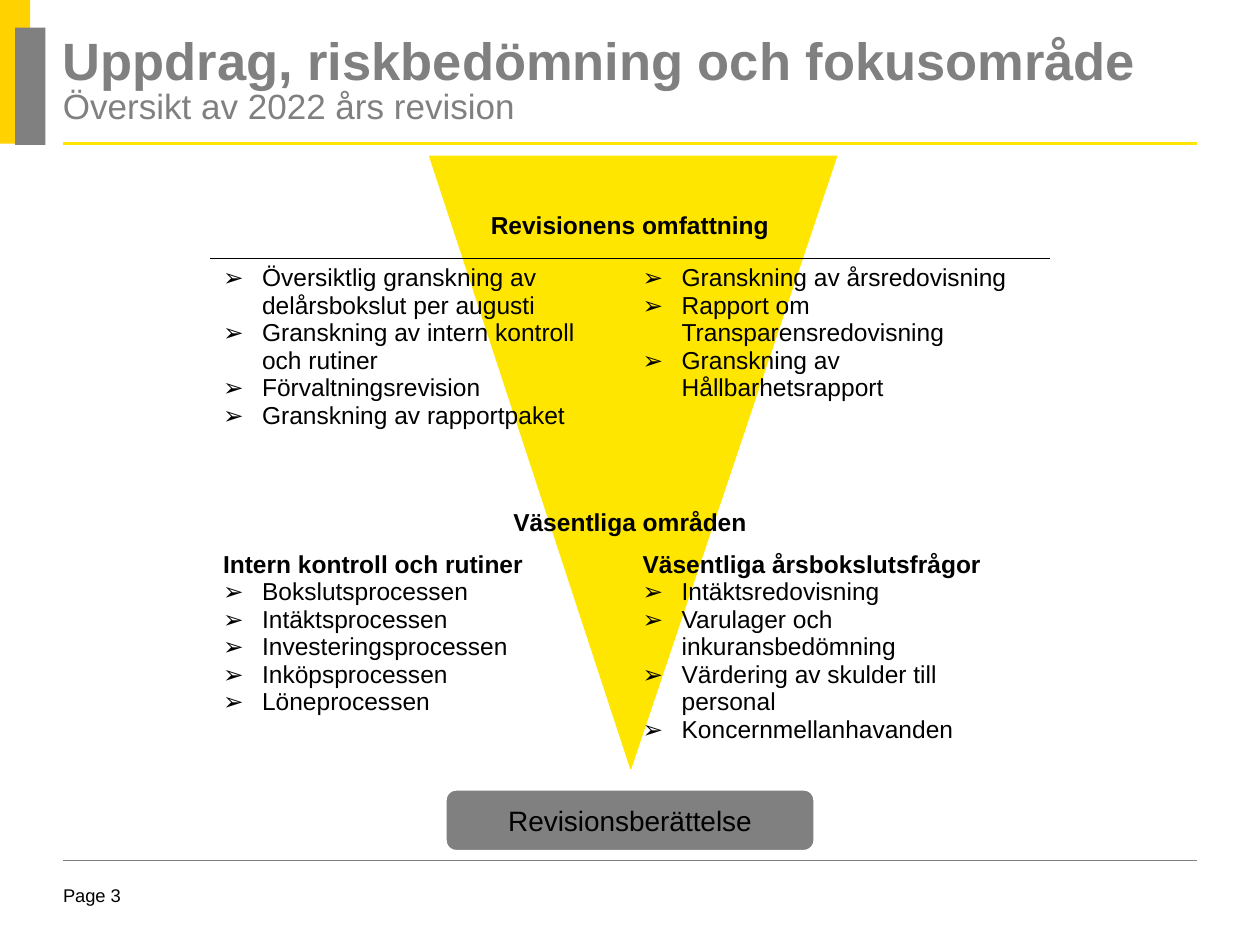
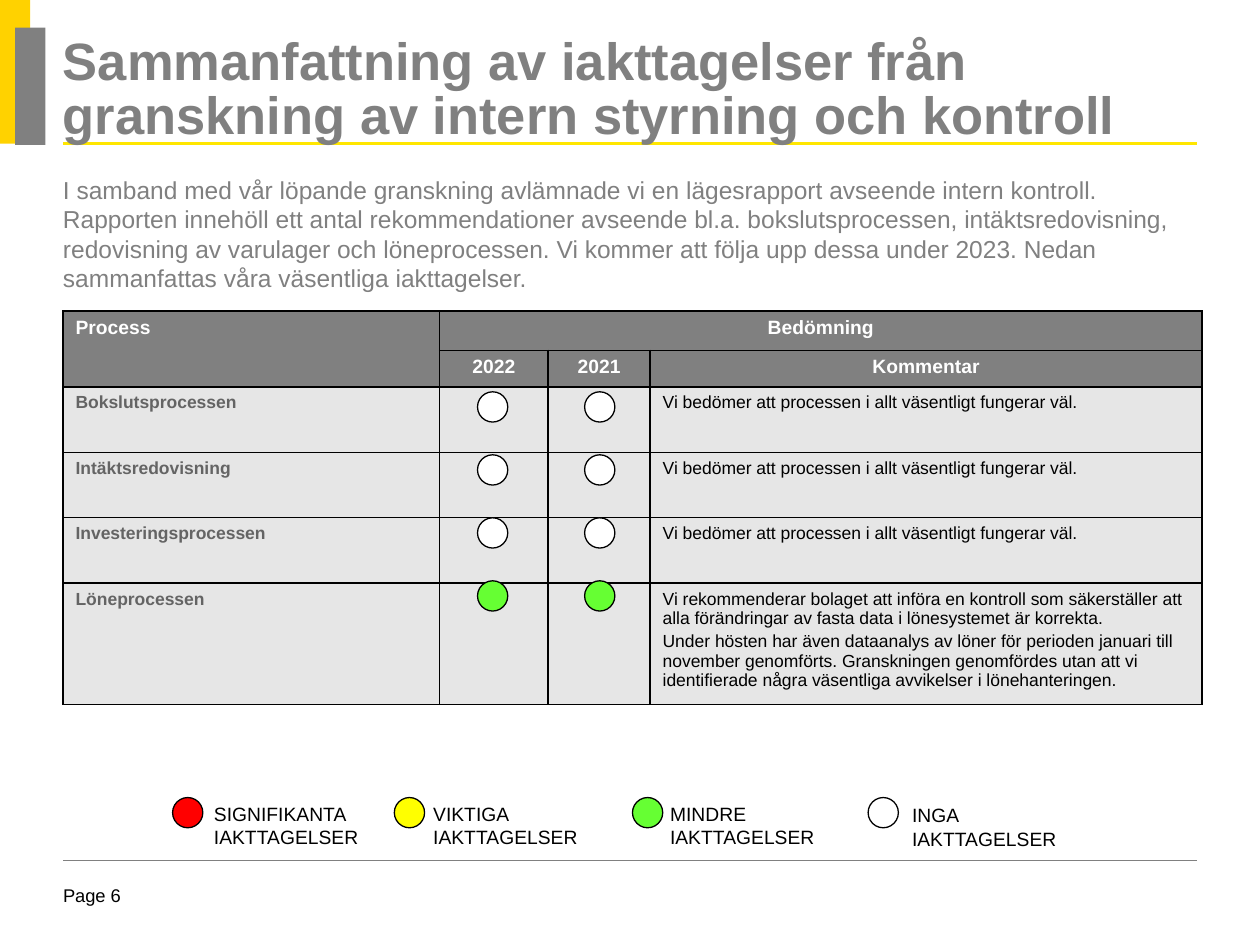
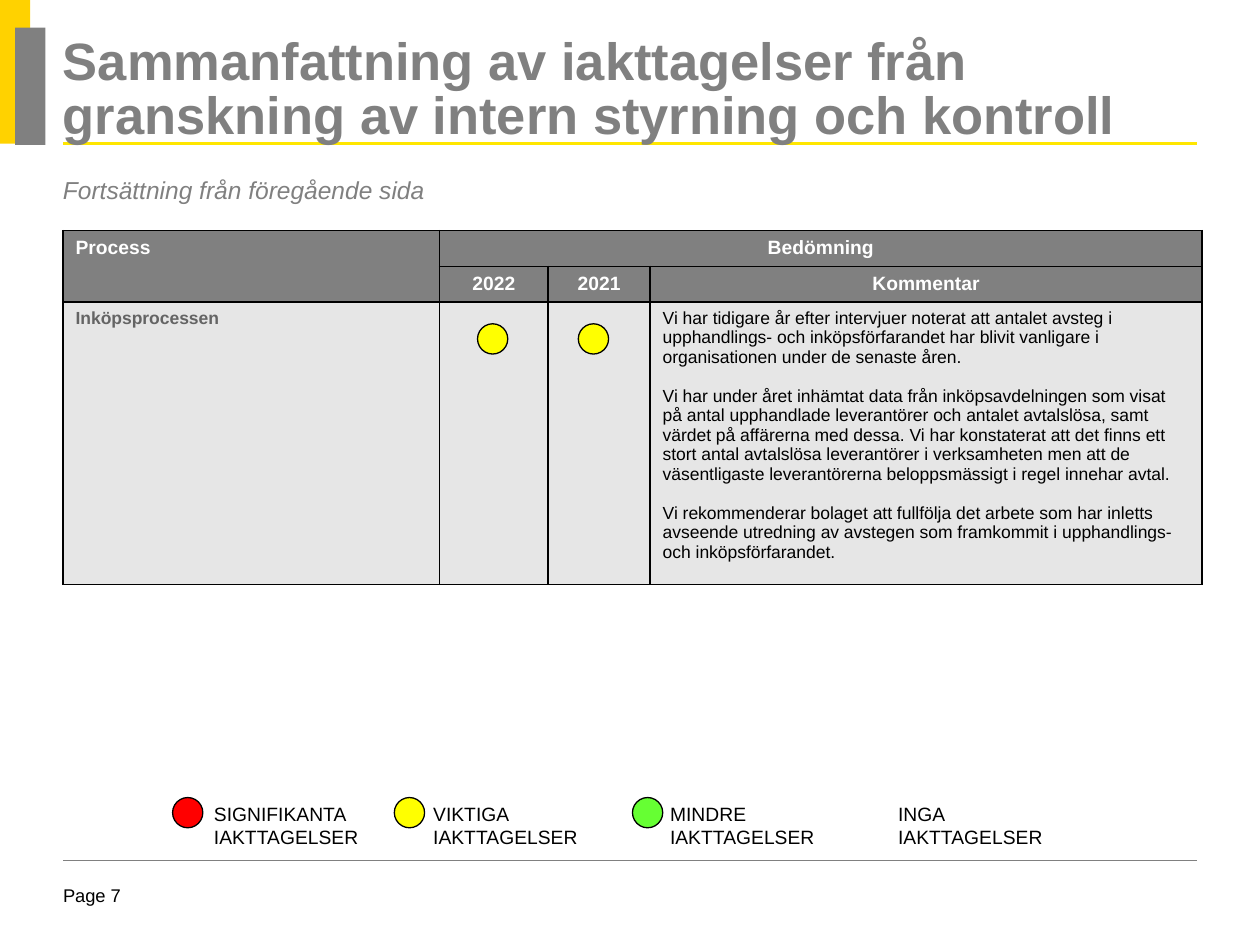
from lxml.etree import SubElement
from pptx import Presentation
from pptx.dml.color import RGBColor
from pptx.enum.shapes import MSO_CONNECTOR, MSO_SHAPE
from pptx.enum.text import MSO_ANCHOR, PP_ALIGN
from pptx.oxml.ns import qn
from pptx.util import Inches, Pt

FONT = "Arial"
BLACK = RGBColor(0, 0, 0)
WHITE = RGBColor(255, 255, 255)
GREY = RGBColor(0x80, 0x80, 0x80)
DARK_GREY = RGBColor(0x64, 0x64, 0x64)
LIGHT_GREY = RGBColor(0xE6, 0xE6, 0xE6)
GOLD = RGBColor(0xFF, 0xD2, 0x00)
BRIGHT_YELLOW = RGBColor(0xFF, 0xE6, 0x00)
RED = RGBColor(0xFF, 0x00, 0x00)
YELLOW = RGBColor(0xFF, 0xFF, 0x00)
GREEN = RGBColor(0x66, 0xFF, 0x33)

NO_STYLE = "{2D5ABB26-0587-4C30-8999-92F81FD0307C}"
SIDES = ("L", "R", "T", "B")
DOT = 0.24
LEGEND_TOP = 6.33
DOT_2022 = 3.79
ASSESSMENT_COLUMNS = (2.99, 0.86, 0.81, 4.38)

SUMMARY_TITLE = "Sammanfattning av iakttagelser från granskning av intern styrning och kontroll"
INTRO = (
    "I samband med vår löpande granskning avlämnade vi en lägesrapport avseende intern kontroll. "
    "Rapporten innehöll ett antal rekommendationer avseende bl.a. bokslutsprocessen, "
    "intäktsredovisning, redovisning av varulager och löneprocessen. Vi kommer att följa upp "
    "dessa under 2023. Nedan sammanfattas våra väsentliga iakttagelser."
)
WORKS_WELL = ["Vi bedömer att processen i allt väsentligt fungerar väl."]
PAYROLL_COMMENT = [
    "Vi rekommenderar bolaget att införa en kontroll som säkerställer att alla förändringar av "
    "fasta data i lönesystemet är korrekta.",
    "Under hösten har även dataanalys av löner för perioden januari till november genomförts. "
    "Granskningen genomfördes utan att vi identifierade några väsentliga avvikelser i "
    "lönehanteringen.",
]
PURCHASING_COMMENT = [
    "Vi har tidigare år efter intervjuer noterat att antalet avsteg i upphandlings- och "
    "inköpsförfarandet har blivit vanligare i organisationen under de senaste åren.",
    "Vi har under året inhämtat data från inköpsavdelningen som visat på antal upphandlade "
    "leverantörer och antalet avtalslösa, samt värdet på affärerna med dessa. Vi har konstaterat "
    "att det finns ett stort antal avtalslösa leverantörer i verksamheten men att de "
    "väsentligaste leverantörerna beloppsmässigt i regel innehar avtal.",
    "Vi rekommenderar bolaget att fullfölja det arbete som har inletts avseende utredning av "
    "avstegen som framkommit i upphandlings- och inköpsförfarandet.",
]
SCOPE = (
    ["Översiktlig granskning av delårsbokslut per augusti",
     "Granskning av intern kontroll och rutiner",
     "Förvaltningsrevision",
     "Granskning av rapportpaket"],
    ["Granskning av årsredovisning",
     "Rapport om Transparensredovisning",
     "Granskning av Hållbarhetsrapport"],
)
KEY_AREAS = (
    ("Intern kontroll och rutiner",
     ["Bokslutsprocessen", "Intäktsprocessen", "Investeringsprocessen",
      "Inköpsprocessen", "Löneprocessen"]),
    ("Väsentliga årsbokslutsfrågor",
     ["Intäktsredovisning", "Varulager och inkuransbedömning",
      "Värdering av skulder till personal", "Koncernmellanhavanden"]),
)
LEGEND = (
    ("SIGNIFIKANTA", 1.37, 1.6, RED),
    ("VIKTIGA", 3.13, 3.34, YELLOW),
    ("MINDRE", 5.02, 5.22, GREEN),
)


def add_bullet(paragraph):
    """Give a paragraph a hanging arrow bullet."""
    properties = paragraph._p.get_or_add_pPr()
    properties.set("marL", str(Inches(0.31)))
    properties.set("indent", str(-Inches(0.31)))
    SubElement(properties, qn("a:buFont")).set("typeface", FONT)
    SubElement(properties, qn("a:buChar")).set("char", "➢")


def write(frame, lines, size, color=BLACK, bold=False, italic=False,
          align=PP_ALIGN.LEFT, gap=0, bulleted=False):
    """Append styled paragraphs to a text frame."""
    for line in lines:
        first = not frame.text
        paragraph = frame.paragraphs[0] if first else frame.add_paragraph()
        paragraph.text = line
        paragraph.alignment = align
        if gap and not first:
            paragraph.space_before = Pt(gap)
        if bulleted:
            add_bullet(paragraph)
        for run in paragraph.runs:
            font = run.font
            font.name, font.size = FONT, Pt(size)
            font.bold, font.italic = bold, italic
            font.color.rgb = color


def add_text(slide, left, top, width, height, margins=(0, 0)):
    """Add a wrapping text box and return its text frame."""
    box = slide.shapes.add_textbox(Inches(left), Inches(top), Inches(width), Inches(height))
    frame = box.text_frame
    frame.word_wrap = True
    frame.margin_left = frame.margin_right = Inches(margins[0])
    frame.margin_top = frame.margin_bottom = Inches(margins[1])
    return frame


def add_block(slide, kind, left, top, width, height, fill=None, outline=None):
    """Add a preset shape with flat fill and optional thin outline."""
    block = slide.shapes.add_shape(kind, Inches(left), Inches(top), Inches(width), Inches(height))
    block.shadow.inherit = False
    if fill is None:
        block.fill.background()
    else:
        block.fill.solid()
        block.fill.fore_color.rgb = fill
    if outline is None:
        block.line.fill.background()
    else:
        block.line.color.rgb = outline
        block.line.width = Pt(0.75)
    return block


def add_dot(slide, left, top, fill=None):
    """Add one round assessment marker."""
    add_block(slide, MSO_SHAPE.FLOWCHART_CONNECTOR, left, top, DOT, DOT, fill, BLACK)


def add_rule(slide, top, color, width):
    """Draw a horizontal rule across the content width."""
    rule = slide.shapes.add_connector(
        MSO_CONNECTOR.STRAIGHT, Inches(0.5), Inches(top), Inches(9.5), Inches(top))
    rule.line.color.rgb = color
    rule.line.width = Pt(width)
    SubElement(rule._element.spPr, qn("a:effectLst"))


def add_page(deck, title, page, subtitle=None):
    """Add a slide with the shared bands, rules, title and page number."""
    slide = deck.slides.add_slide(deck.slide_layouts[6])
    write(add_text(slide, 0.5, 7.02, 0.79, 0.22), [f"Page {page}"], 10.5)
    add_block(slide, MSO_SHAPE.RECTANGLE, 0, 0, 0.24, 1.14, GOLD)
    add_block(slide, MSO_SHAPE.RECTANGLE, 0.12, 0.22, 0.24, 0.93, GREY)
    add_rule(slide, 1.14, BRIGHT_YELLOW, 1.5)
    add_rule(slide, 6.83, GREY, 0.25)
    heading = add_text(slide, 0.5, 0.3, 9, 0.94)
    write(heading, [title], 30, GREY, bold=True)
    if subtitle:
        write(heading, [subtitle], 20, GREY)
    for paragraph in heading.paragraphs:
        paragraph.line_spacing = 0.85
    return slide


def style_cell(cell, fill=None, borders=SIDES):
    """Set the borders and fill of a table cell."""
    properties = cell._tc.get_or_add_tcPr()
    for side in SIDES:
        line = SubElement(properties, qn(f"a:ln{side}"))
        if side in borders:
            line.set("w", str(Pt(1)))
            solid = SubElement(line, qn("a:solidFill"))
            SubElement(solid, qn("a:srgbClr")).set("val", str(BLACK))
        else:
            SubElement(line, qn("a:noFill"))
    if fill is None:
        cell.fill.background()
    else:
        cell.fill.solid()
        cell.fill.fore_color.rgb = fill


def add_grid(slide, left, top, columns, rows):
    """Add an unstyled table with the given column widths and row heights."""
    table = slide.shapes.add_table(
        len(rows), len(columns), Inches(left), Inches(top),
        Inches(sum(columns)), Inches(sum(rows))).table
    table.first_row = table.horz_banding = False
    table._tbl.tblPr.find(qn("a:tableStyleId")).text = NO_STYLE
    for column, width in zip(table.columns, columns):
        column.width = Inches(width)
    for row, height in zip(table.rows, rows):
        row.height = Inches(height)
    return table


def add_assessment(slide, top, row_heights, processes, gap):
    """Add the table of processes with their comments."""
    table = add_grid(slide, 0.5, top, ASSESSMENT_COLUMNS, row_heights)
    for index, row in enumerate(table.rows):
        for cell in row.cells:
            style_cell(cell, GREY if index < 2 else LIGHT_GREY)
    table.cell(0, 0).merge(table.cell(1, 0))
    table.cell(0, 1).merge(table.cell(0, 3))
    write(table.cell(0, 0).text_frame, ["Process"], 11, WHITE, bold=True)
    headers = ((0, 1, "Bedömning"), (1, 1, "2022"), (1, 2, "2021"), (1, 3, "Kommentar"))
    for row, column, label in headers:
        write(table.cell(row, column).text_frame, [label], 11, WHITE,
              bold=True, align=PP_ALIGN.CENTER)
    for row, (process, comment) in enumerate(processes, start=2):
        write(table.cell(row, 0).text_frame, [process], 10, DARK_GREY, bold=True)
        write(table.cell(row, 3).text_frame, comment, 10, gap=gap)


def add_legend_label(slide, level, left, top=6.32):
    """Add the two-line label of one assessment level."""
    label = add_text(slide, left, top, 1.5, 0.47, (0.1, 0.05))
    write(label, [level, "IAKTTAGELSER"], 11)


def add_legend(slide):
    """Add the coloured assessment levels."""
    for level, dot_left, label_left, color in LEGEND:
        add_legend_label(slide, level, label_left)
        add_dot(slide, dot_left, LEGEND_TOP, color)


def add_overview(deck):
    """Build the overview of the audit."""
    slide = add_page(deck, "Uppdrag, riskbedömning och fokusområde", 3,
                     "Översikt av 2022 års revision")
    funnel = add_block(slide, MSO_SHAPE.ISOSCELES_TRIANGLE, 3.41, 1.24, 3.23, 4.86,
                       BRIGHT_YELLOW, BRIGHT_YELLOW)
    funnel.adjustments[0] = 0.506
    funnel.rotation = 180
    report = add_block(slide, MSO_SHAPE.ROUNDED_RECTANGLE, 3.54, 6.27, 2.92, 0.48, GREY, WHITE)
    report.text_frame.vertical_anchor = MSO_ANCHOR.MIDDLE
    write(report.text_frame, ["Revisionsberättelse"], 16, align=PP_ALIGN.CENTER)

    table = add_grid(slide, 1.67, 1.53, (3.33, 3.33), (0.52, 1.94, 0.32, 2.24))
    row_borders = ("B", "T", "", "")
    for row, borders in zip(table.rows, row_borders):
        for cell in row.cells:
            style_cell(cell, borders=borders)
    for row, heading in ((0, "Revisionens omfattning"), (2, "Väsentliga områden")):
        table.cell(row, 0).merge(table.cell(row, 1))
        write(table.cell(row, 0).text_frame, [heading], 14, bold=True, align=PP_ALIGN.CENTER)
    table.cell(0, 0).vertical_anchor = MSO_ANCHOR.MIDDLE
    for column, tasks in enumerate(SCOPE):
        write(table.cell(1, column).text_frame, tasks, 14, bulleted=True)
    for column, (heading, areas) in enumerate(KEY_AREAS):
        frame = table.cell(3, column).text_frame
        write(frame, [heading], 14, bold=True)
        write(frame, areas, 14, bulleted=True)


def add_summary(deck):
    """Build the first page of observations."""
    slide = add_page(deck, SUMMARY_TITLE, 6)
    write(add_text(slide, 0.5, 1.34, 9, 1.1, (0, 0.05)), [INTRO], 14, GREY)
    processes = (
        ("Bokslutsprocessen", WORKS_WELL),
        ("Intäktsredovisning", WORKS_WELL),
        ("Investeringsprocessen", WORKS_WELL),
        ("Löneprocessen", PAYROLL_COMMENT),
    )
    add_assessment(slide, 2.47, (0.31, 0.29, 0.52, 0.52, 0.52, 0.9), processes, gap=2)
    add_legend(slide)
    add_legend_label(slide, "INGA", 7.14, LEGEND_TOP)
    add_dot(slide, 6.89, LEGEND_TOP)
    for index, color in enumerate((WHITE, WHITE, WHITE, GREEN)):
        for left in (DOT_2022, 4.64):
            add_dot(slide, left, 3.11 + 0.5 * index, color)


def add_continuation(deck):
    """Build the second page of observations."""
    slide = add_page(deck, SUMMARY_TITLE, 7)
    add_assessment(slide, 1.83, (0.27, 0.27, 2.12),
                   [("Inköpsprocessen", PURCHASING_COMMENT)], gap=11)
    add_legend(slide)
    add_legend_label(slide, "INGA", 7.03)
    for left in (DOT_2022, 4.59):
        add_dot(slide, left, 2.57, YELLOW)
    write(add_text(slide, 0.5, 1.34, 9, 0.4, (0, 0.05)),
          ["Fortsättning från föregående sida"], 14, GREY, italic=True)


def main():
    """Build and save the presentation."""
    deck = Presentation()
    deck.slide_width, deck.slide_height = Inches(10), Inches(7.5)
    add_overview(deck)
    add_summary(deck)
    add_continuation(deck)
    deck.save("out.pptx")


if __name__ == "__main__":
    main()
